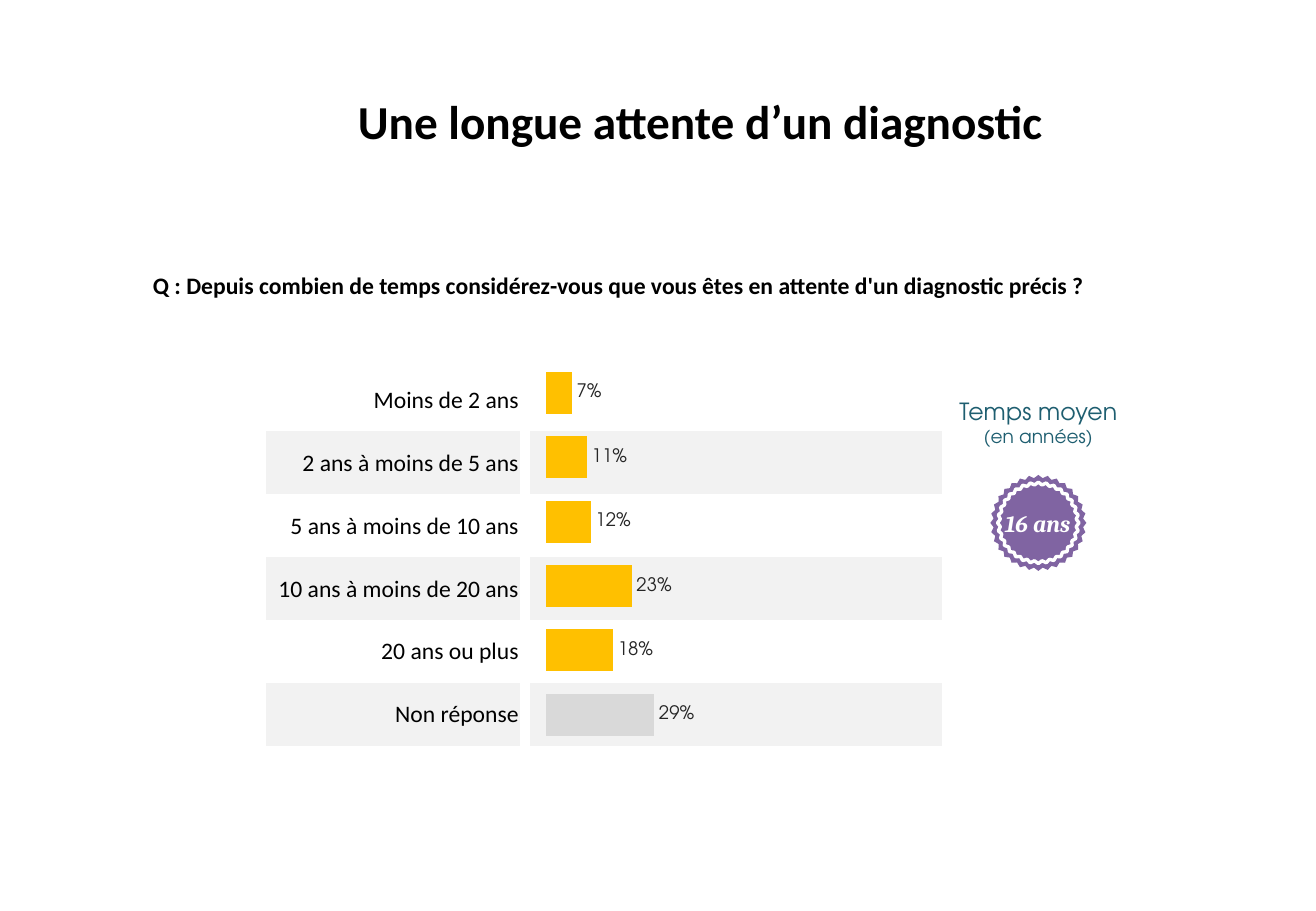
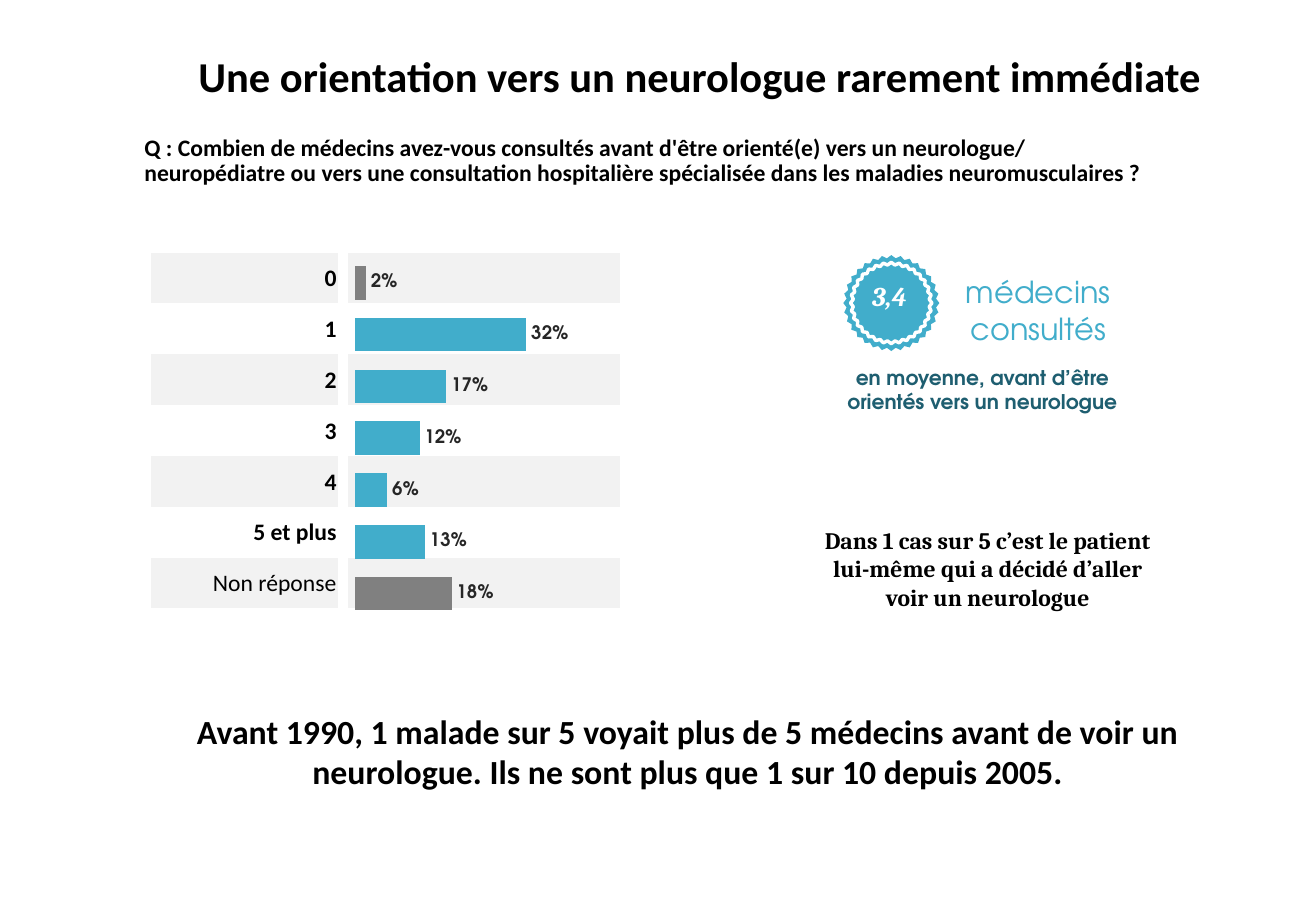
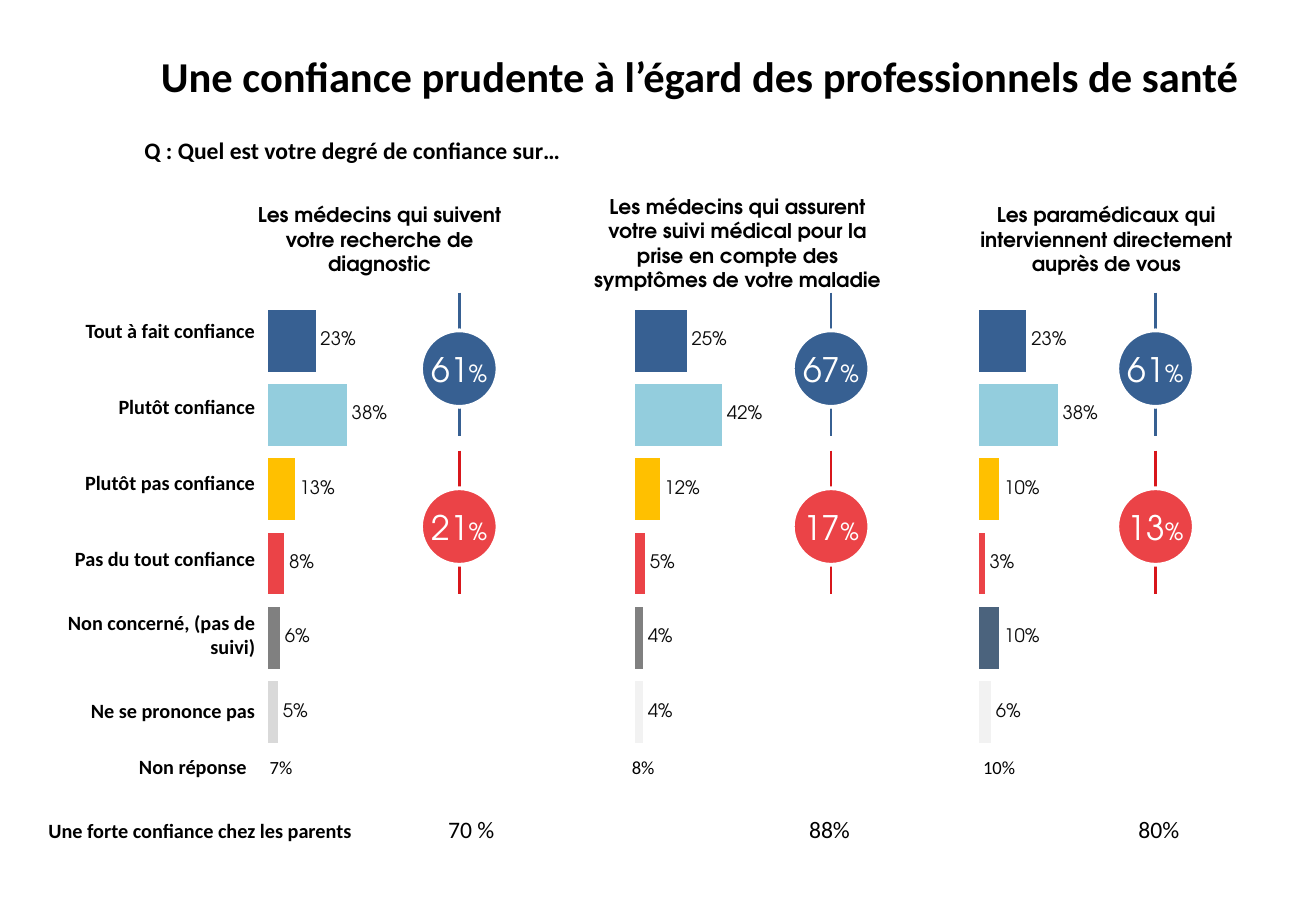
from dataclasses import dataclass, field

from lxml import etree
from pptx import Presentation
from pptx import util as u
from pptx.chart import data as cd
from pptx.dml import color as col
from pptx.enum import chart as ch
from pptx.enum import shapes as sh
from pptx.enum import text as tx
from pptx.oxml import ns

In, Pt = u.Inches, u.Pt
BODY, ROUND, SERIF = "Calibri", "TeX Gyre Adventor", "Cambria"
BLACK, WHITE, BAND = "000000", "FFFFFF", "F2F2F2"
BLUE, RED, AQUA, TEAL = "376092", "EB4347", "41ADCB", "1E5E70"
GOLD, GREY, PALE = "FFC000", "808080", "D9D9D9"
PLAIN = "{2D5ABB26-0587-4C30-8999-92F81FD0307C}"
LEFT, MID, RIGHT = tx.PP_ALIGN.LEFT, tx.PP_ALIGN.CENTER, tx.PP_ALIGN.RIGHT
TOP, CORE = tx.MSO_ANCHOR.TOP, tx.MSO_ANCHOR.MIDDLE
Box = tuple[float, float, float, float]


@dataclass
class Type:
    size: float
    font: str = BODY
    ink: str = BLACK
    bold: bool = False
    slant: bool = False
    align: tx.PP_ALIGN = MID
    anchor: tx.MSO_ANCHOR = TOP
    inset: tuple[float, float] = (0.1, 0.05)
    lead: float | u.Length | None = None


@dataclass
class Bars:
    box: Box
    vals: list[float]
    top: float
    plot: Box
    ink: str
    spots: dict[int, str]
    gap: int = 54
    lap: int = -9
    bold: bool = False
    tone: str = "262626"


@dataclass
class Grid:
    box: Box
    cols: list[float]
    rows: list[str]
    size: float = 14
    bold: bool = False
    light: list[int] = field(default_factory=list)
    bands: list[int] = field(default_factory=list)


@dataclass
class Panel:
    head: str
    at: Box
    left: float
    vals: list[float]
    spots: dict[int, str]
    axis: float
    good: str
    bad: str
    none: str
    note: float


def rgb(hue: str) -> col.RGBColor:
    return col.RGBColor.from_string(hue)


def ink(font, kind: Type) -> None:
    font.name, font.size = kind.font, Pt(kind.size)
    font.bold, font.italic = kind.bold, kind.slant
    font.color.rgb = rgb(kind.ink)


def fill(item, hue: str) -> None:
    item.fill.solid()
    item.fill.fore_color.rgb = rgb(hue)


def write(slide, box: Box, words: str, kind: Type):
    item = slide.shapes.add_textbox(*map(In, box))
    frame = item.text_frame
    frame.word_wrap = True
    frame.vertical_anchor = kind.anchor
    frame.margin_left = frame.margin_right = In(kind.inset[0])
    frame.margin_top = frame.margin_bottom = In(kind.inset[1])
    frame.text = words
    for para in frame.paragraphs:
        para.alignment = kind.align
        if kind.lead:
            para.line_spacing = kind.lead
        for run in para.runs:
            ink(run.font, kind)
    return frame


def title(slide, words: str, top: float = 0.31, size: float = 25.2) -> None:
    write(slide, (1.09, top, 9.34, 0.62), words, Type(size, bold=True, anchor=CORE))


def ask(slide, words: str, left: float = 1.09, top: float = 1.07, lead: float | None = None) -> None:
    write(slide, (left, top, 8.43, 0.47), words, Type(14, bold=True, align=LEFT, lead=lead))


def shape(slide, kind: sh.MSO_SHAPE, box: Box, hue: str | None, edge: float = 0):
    item = slide.shapes.add_shape(kind, *map(In, box))
    item.shadow.inherit = False
    if hue:
        fill(item, hue)
    else:
        item.fill.background()
    if edge:
        item.line.color.rgb = rgb(WHITE)
        item.line.width = Pt(edge)
    else:
        item.line.fill.background()
    return item


def badge(slide, left: float, top: float, hue: str) -> None:
    rim = 0.06
    inner = (left + rim, top + rim, 0.67, 0.67)
    for box, tint, edge in (((left, top, 0.79, 0.79), hue, 0), (inner, None, 2)):
        shape(slide, sh.MSO_SHAPE.STAR_32_POINT, box, tint, edge).adjustments[0] = 0.468


def table(slide, grid: Grid) -> None:
    count = len(grid.rows)
    item = slide.shapes.add_table(count, len(grid.cols), *map(In, grid.box)).table
    item.first_row = item.horz_banding = False
    item._tbl.tblPr.find(ns.qn("a:tableStyleId")).text = PLAIN
    for part, wide in zip(item.columns, grid.cols):
        part.width = In(wide)
    for num, words in enumerate(grid.rows):
        item.rows[num].height = In(grid.box[3] / count)
        for place in range(len(grid.cols)):
            cell = item.cell(num, place)
            cell.margin_left = cell.margin_right = cell.margin_top = In(0.01)
            cell.margin_bottom = 0
            cell.vertical_anchor = CORE
            if num in grid.bands and place != 1:
                fill(cell, BAND)
            else:
                cell.fill.background()
        para = item.cell(num, 0).text_frame.paragraphs[0]
        para.text = words
        para.alignment = RIGHT
        bold = grid.bold and num not in grid.light
        ink(para.runs[0].font, Type(grid.size, bold=bold))


def place(area, plot: Box) -> None:
    old = area.find(ns.qn("c:layout"))
    if old is not None:
        area.remove(old)
    lay = etree.Element(ns.qn("c:layout"))
    man = etree.SubElement(lay, ns.qn("c:manualLayout"))
    tags = ("layoutTarget", "xMode", "yMode", "x", "y", "w", "h")
    for tag, val in zip(tags, ("inner", "edge", "edge", *plot)):
        etree.SubElement(man, ns.qn("c:" + tag)).set("val", str(val))
    area.insert(0, lay)


def chart(slide, bars: Bars) -> None:
    data = cd.CategoryChartData(number_format="0%")
    data.categories = [str(num + 1) for num in range(len(bars.vals))]
    data.add_series("Series 1", bars.vals)
    kind = ch.XL_CHART_TYPE.BAR_CLUSTERED
    item = slide.shapes.add_chart(kind, *map(In, bars.box), data).chart
    item.has_legend = item.has_title = False
    ink(item.font, Type(18))
    cat, val = item.category_axis, item.value_axis
    cat.reverse_order = True
    cat.visible = val.visible = False
    val.has_major_gridlines = False
    val.minimum_scale, val.maximum_scale = 0, bars.top
    plot = item.plots[0]
    plot.vary_by_categories = False
    plot.gap_width, plot.overlap = bars.gap, bars.lap
    ser = plot.series[0]
    fill(ser.format, bars.ink)
    for num, hue in bars.spots.items():
        fill(ser.points[num].format, hue)
    tags = ser.data_labels
    tags.show_value = True
    tags.position = ch.XL_LABEL_POSITION.OUTSIDE_END
    tags.number_format, tags.number_format_is_linked = "0%", False
    ink(tags.font, Type(11, ROUND, bars.tone, bars.bold))
    place(item._chartSpace.chart.plotArea, bars.plot)


def score(slide, axis: float, top: float, words: str, hue: str, edge: str) -> None:
    kind = sh.MSO_CONNECTOR.STRAIGHT
    line = slide.shapes.add_connector(kind, *map(In, (axis, top, axis, top + 1.18)))
    line.line.color.rgb = rgb(edge)
    line.line.width = Pt(1.5)
    etree.SubElement(line._element.spPr, ns.qn("a:effectLst"))
    size = 0.63
    disc = shape(slide, sh.MSO_SHAPE.OVAL, (axis - size / 2, top + 0.31, size, size), hue, 2.25)
    frame = disc.text_frame
    frame.margin_left = frame.margin_right = frame.margin_top = frame.margin_bottom = 0
    frame.word_wrap = False
    frame.vertical_anchor = CORE
    para = frame.paragraphs[0]
    para.alignment = MID
    for bit, pts in ((words, 20), ("%", 14)):
        run = para.add_run()
        run.text = bit
        ink(run.font, Type(pts, ROUND, WHITE))


def wait(slide) -> None:
    title(slide, "Une longue attente d’un diagnostic", 0.68, 28)
    ask(slide, "Q : Depuis combien de temps considérez-vous que vous êtes en attente "
        "d'un diagnostic précis ?", 1.16, 2.18)
    rows = ["Moins de 2 ans", "2 ans à moins de 5 ans", "5 ans à moins de 10 ans",
            "10 ans à moins de 20 ans", "20 ans ou plus", "Non réponse"]
    table(slide, Grid((2.19, 3.03, 5.56, 3.11), [2.09, 0.08, 3.39], rows, bands=[1, 3, 5]))
    chart(slide, Bars((4.45, 2.92, 3.12, 3.27), [0.07, 0.11, 0.12, 0.23, 0.18, 0.29], 1,
                      (0.013, 0.015, 0.987, 0.973), GOLD, {5: PALE}))
    badge(slide, 8.15, 3.91, "8064A2")
    write(slide, (8.13, 4.02, 0.82, 0.57), "16 ans", Type(14, SERIF, WHITE, True, True, anchor=CORE))
    mean = write(slide, (7.62, 3.22, 1.85, 0.54), "Temps moyen\n(en années)", Type(14, ROUND, TEAL))
    mean.paragraphs[1].runs[0].font.size = Pt(11)


def guide(slide) -> None:
    title(slide, "Une orientation vers un neurologue rarement immédiate")
    rows = ["0", "1", "2", "3", "4", "5 et plus", "Non réponse"]
    table(slide, Grid((1.24, 2.08, 3.86, 2.93), [1.54, 0.08, 2.24], rows,
                      bold=True, light=[6], bands=[0, 2, 4, 6]))
    chart(slide, Bars((2.9, 2.1, 3.12, 3.07), [0.02, 0.32, 0.17, 0.12, 0.06, 0.13, 0.18], 0.7,
                      (0.008, 0.005, 0.987, 0.973), AQUA, {0: GREY, 6: GREY}, bold=True))
    ask(slide, "Q : Combien de médecins avez-vous consultés avant d'être orienté(e) vers un "
        "neurologue/ neuropédiatre ou vers une consultation hospitalière spécialisée dans les "
        "maladies neuromusculaires ?", lead=0.9)
    badge(slide, 6.94, 2.1, AQUA)
    write(slide, (6.91, 2.25, 0.82, 0.37), "3,4", Type(16, SERIF, WHITE, True, True, anchor=CORE))
    write(slide, (7.62, 2.2, 1.85, 0.71), "médecins consultés", Type(18, ROUND, AQUA))
    write(slide, (6.76, 2.96, 2.65, 0.5), "en moyenne, avant d’être orientés vers un neurologue",
          Type(12, ROUND, TEAL, True))
    write(slide, (6.6, 4.28, 3.06, 0.81), "Dans 1 cas sur 5 c’est le patient\n"
          "lui-même qui a décidé d’aller\nvoir un neurologue", Type(14, SERIF, bold=True))
    write(slide, (1.09, 5.8, 9.14, 1.08), "Avant 1990, 1 malade sur 5 voyait plus de 5 médecins "
          "avant de voir un neurologue. Ils ne sont plus que 1 sur 10 depuis 2005.",
          Type(20, bold=True))


def trust(slide) -> None:
    title(slide, "Une confiance prudente à l’égard des professionnels de santé")
    ask(slide, "Q : Quel est votre degré de confiance sur…")
    rows = ["Tout à fait confiance", "Plutôt confiance", "Plutôt pas confiance",
            "Pas du tout confiance", "Non concerné, (pas de suivi)", "Ne se prononce pas"]
    table(slide, Grid((0.26, 2.41, 1.85, 3.76), [1.85], rows, 12, True))
    base = dict(enumerate((BLUE, "93CDDD", GOLD, RED)))
    panels = [
        Panel("Les médecins qui suivent votre recherche de diagnostic", (2.01, 1.62, 2.23, 0.71),
              2.06, [0.23, 0.38, 0.13, 0.08, 0.06, 0.05], {4: GREY, 5: PALE},
              3.78, "61", "21", "7%", 2.18),
        Panel("Les médecins qui assurent votre suivi médical pour la prise en compte des "
              "symptômes de votre maladie", (4.76, 1.55, 2.62, 0.91),
              5.08, [0.25, 0.42, 0.12, 0.05, 0.04, 0.04], {4: GREY, 5: BAND},
              6.84, "67", "17", "8%", 5.16),
        Panel("Les paramédicaux qui interviennent directement auprès de vous",
              (7.91, 1.62, 2.39, 0.71),
              7.91, [0.23, 0.38, 0.1, 0.03, 0.1, 0.06], {5: BAND},
              9.51, "61", "13", "10%", 8.05),
    ]
    small = {"anchor": CORE, "inset": (0.04, 0.04), "lead": Pt(13)}
    for item in panels:
        chart(slide, Bars((item.left, 2.33, 2.86, 3.84), item.vals, 1.5, (0.05, 0.044, 0.9, 0.956),
                          "4B637D", base | item.spots, 20, 0, tone="0D0D0D"))
        score(slide, item.axis, 2.41, item.good, BLUE, BLUE)
        score(slide, item.axis, 3.71, item.bad, RED, "D8161B")
        write(slide, item.at, item.head, Type(12, ROUND, bold=True))
        write(slide, (item.note, 6.19, 1.46, 0.26), item.none, Type(11, align=LEFT, **small))
    write(slide, (0.65, 6.19, 1.42, 0.26), "Non réponse", Type(12, bold=True, align=RIGHT, **small))
    frame = write(slide, (0.3, 6.66, 9.84, 0.34), "Une forte confiance chez les parents",
                  Type(12, bold=True, align=LEFT))
    para = frame.paragraphs[0]
    tabs = etree.SubElement(para._p.get_or_add_pPr(), ns.qn("a:tabLst"))
    for stop in (3.29, 6.26, 8.97):
        etree.SubElement(tabs, ns.qn("a:tab"), pos=str(In(stop)), algn="l")
    run = para.add_run()
    run.text = "\t70 %\t88%\t80%"
    ink(run.font, Type(14))


def main() -> None:
    deck = Presentation()
    deck.slide_width, deck.slide_height = In(10.83), In(7.5)
    for draw in (wait, guide, trust):
        draw(deck.slides.add_slide(deck.slide_layouts[6]))
    deck.save("out.pptx")


if __name__ == "__main__":
    main()
